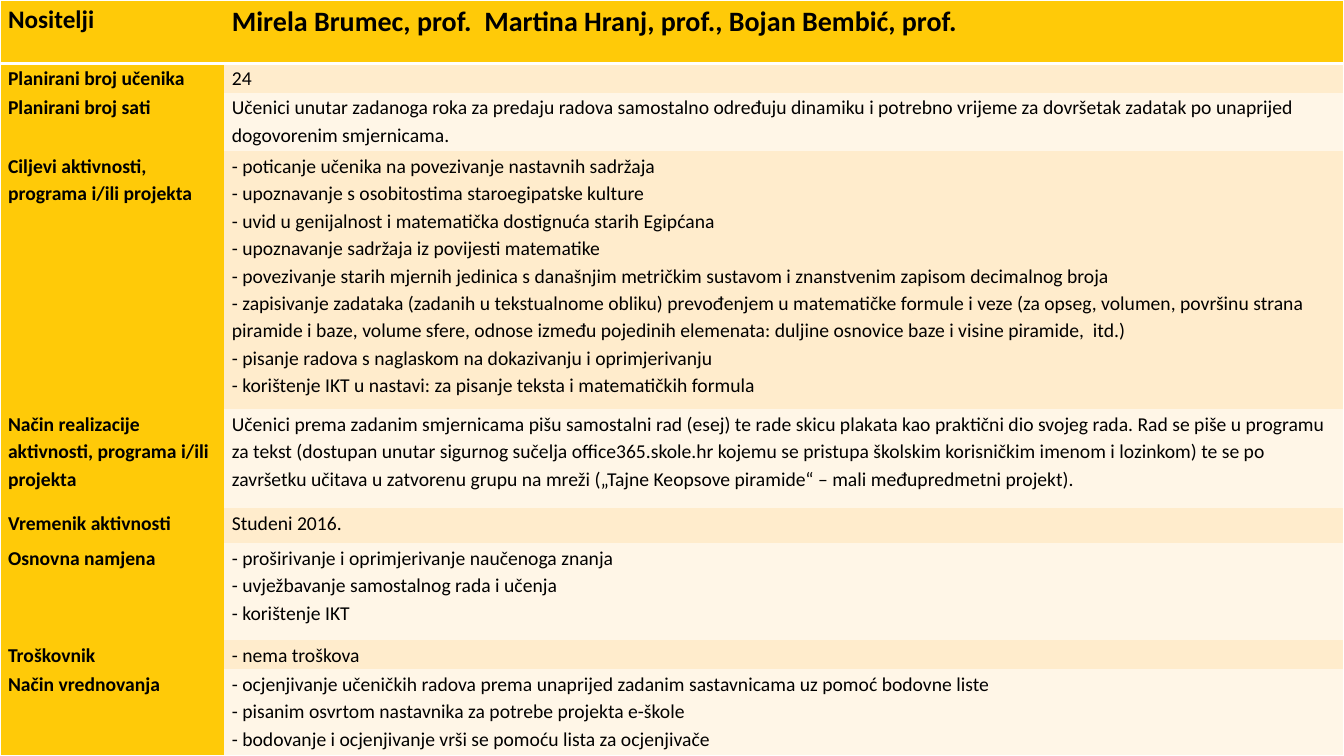
"""Builds a one-slide table describing a school project on the pyramid of Cheops."""
from lxml import etree
from pptx import Presentation
from pptx.dml.color import RGBColor
from pptx.oxml.ns import qn
from pptx.util import Inches, Pt

BLANK_LAYOUT = 6
NO_STYLE_NO_GRID = "{2D5ABB26-0587-4C30-8999-92F81FD0307C}"
COLORS = {
    "background": "39302A",
    "label": "FFCA08",
    "odd": "FFECCC",
    "even": "FFF6E7",
    "border": "FFFFFF",
    "text": "000000",
}
COLUMN_WIDTHS = [2.22, 11.11]
PROJECT_ROWS = [
    (0.63, "Nositelji", ["Mirela Brumec, prof.  Martina Hranj, prof., Bojan Bembić, prof."]),
    (0.29, "Planirani broj učenika", ["24"]),
    (0.58, "Planirani broj sati", [
        "Učenici unutar zadanoga roka za predaju radova samostalno određuju dinamiku i potrebno "
        "vrijeme za dovršetak zadatak po unaprijed dogovorenim smjernicama.",
    ]),
    (2.56, "Ciljevi aktivnosti, programa i/ili projekta", [
        "- poticanje učenika na povezivanje nastavnih sadržaja",
        "- upoznavanje s osobitostima staroegipatske kulture",
        "- uvid u genijalnost i matematička dostignuća starih Egipćana",
        "- upoznavanje sadržaja iz povijesti matematike",
        "- povezivanje starih mjernih jedinica s današnjim metričkim sustavom i znanstvenim "
        "zapisom decimalnog broja",
        "- zapisivanje zadataka (zadanih u tekstualnome obliku) prevođenjem u matematičke formule "
        "i veze (za opseg, volumen, površinu strana piramide i baze, volume sfere, odnose između "
        "pojedinih elemenata: duljine osnovice baze i visine piramide,  itd.)",
        "- pisanje radova s naglaskom na dokazivanju i oprimjerivanju",
        "- korištenje IKT u nastavi: za pisanje teksta i matematičkih formula",
    ]),
    (0.98, "Način realizacije aktivnosti, programa i/ili projekta", [
        "Učenici prema zadanim smjernicama pišu samostalni rad (esej) te rade skicu plakata kao "
        "praktični dio svojeg rada. Rad se piše u programu za tekst (dostupan unutar sigurnog sučelja "
        "office365.skole.hr kojemu se pristupa školskim korisničkim imenom i lozinkom) te se po "
        "završetku učitava u zatvorenu grupu na mreži („Tajne Keopsove piramide“ – mali "
        "međupredmetni projekt).",
    ]),
    (0.35, "Vremenik aktivnosti", ["Studeni 2016."]),
    (0.96, "Osnovna namjena", [
        "- proširivanje i oprimjerivanje naučenoga znanja",
        "- uvježbavanje samostalnog rada i učenja",
        "- korištenje IKT",
    ]),
    (0.29, "Troškovnik", ["- nema troškova"]),
    (0.86, "Način vrednovanja", [
        "- ocjenjivanje učeničkih radova prema unaprijed zadanim sastavnicama uz pomoć bodovne liste",
        "- pisanim osvrtom nastavnika za potrebe projekta e-škole",
        "- bodovanje i ocjenjivanje vrši se pomoću lista za ocjenjivače",
    ]),
]
HEADER_SIZES = [18, 20]
BODY_SIZE = 14
CELL_MARGINS = {"margin_left": 0.08, "margin_right": 0, "margin_top": 0, "margin_bottom": 0}


def add_border(cell, edge, points):
    """Draw a solid line along one edge of a cell."""
    line = etree.SubElement(cell._tc.get_or_add_tcPr(), qn(f"a:{edge}"), w=str(Pt(points)))
    fill = etree.SubElement(line, qn("a:solidFill"))
    etree.SubElement(fill, qn("a:srgbClr"), val=COLORS["border"])


presentation = Presentation()
presentation.slide_width = Inches(13.33)
presentation.slide_height = Inches(7.5)
slide = presentation.slides.add_slide(presentation.slide_layouts[BLANK_LAYOUT])
slide.background.fill.solid()
slide.background.fill.fore_color.rgb = RGBColor.from_string(COLORS["background"])

last_row = len(PROJECT_ROWS) - 1
table_frame = slide.shapes.add_table(
    len(PROJECT_ROWS), len(COLUMN_WIDTHS), 0, 0,
    presentation.slide_width, presentation.slide_height,
)
table = table_frame.table
table._tbl.tblPr.find(qn("a:tableStyleId")).text = NO_STYLE_NO_GRID
table.horz_banding = False
for column, width in zip(table.columns, COLUMN_WIDTHS):
    column.width = Inches(width)

for row_index, (height, label, details) in enumerate(PROJECT_ROWS):
    table.rows[row_index].height = Inches(height)
    is_header = row_index == 0
    band = "label" if is_header else ("odd" if row_index % 2 else "even")
    for column_index, lines in enumerate([[label], details]):
        cell = table.cell(row_index, column_index)
        is_label = column_index == 0
        for name, margin in CELL_MARGINS.items():
            setattr(cell, name, Inches(margin))

        add_border(cell, "lnL" if is_label else "lnR", 1)
        if is_header:
            add_border(cell, "lnT", 1)
            add_border(cell, "lnB", 3)
        elif row_index == last_row:
            add_border(cell, "lnB", 1)
        cell.fill.solid()
        cell.fill.fore_color.rgb = RGBColor.from_string(COLORS["label" if is_label else band])

        font_format = {
            "name": "Calibri",
            "size": Pt(HEADER_SIZES[column_index] if is_header else BODY_SIZE),
            "bold": is_header or is_label,
        }
        text_frame = cell.text_frame
        for line_index, line in enumerate(lines):
            paragraph = text_frame.add_paragraph() if line_index else text_frame.paragraphs[0]
            paragraph.line_spacing = 1.15
            run = paragraph.add_run()
            run.text = line
            for name, value in font_format.items():
                setattr(run.font, name, value)
            run.font.color.rgb = RGBColor.from_string(COLORS["text"])
        paragraph.space_after = Pt(10)

presentation.save("out.pptx")
